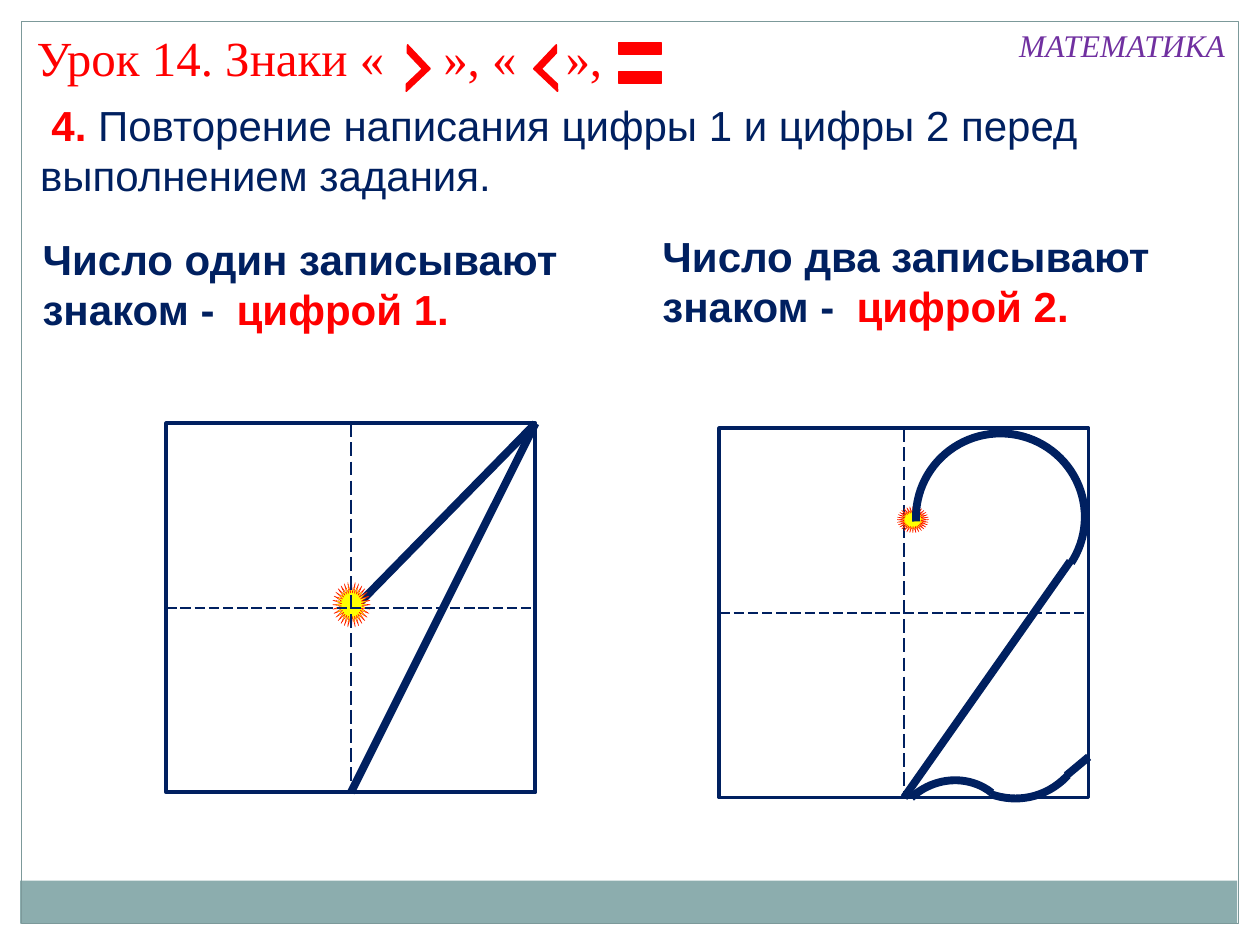
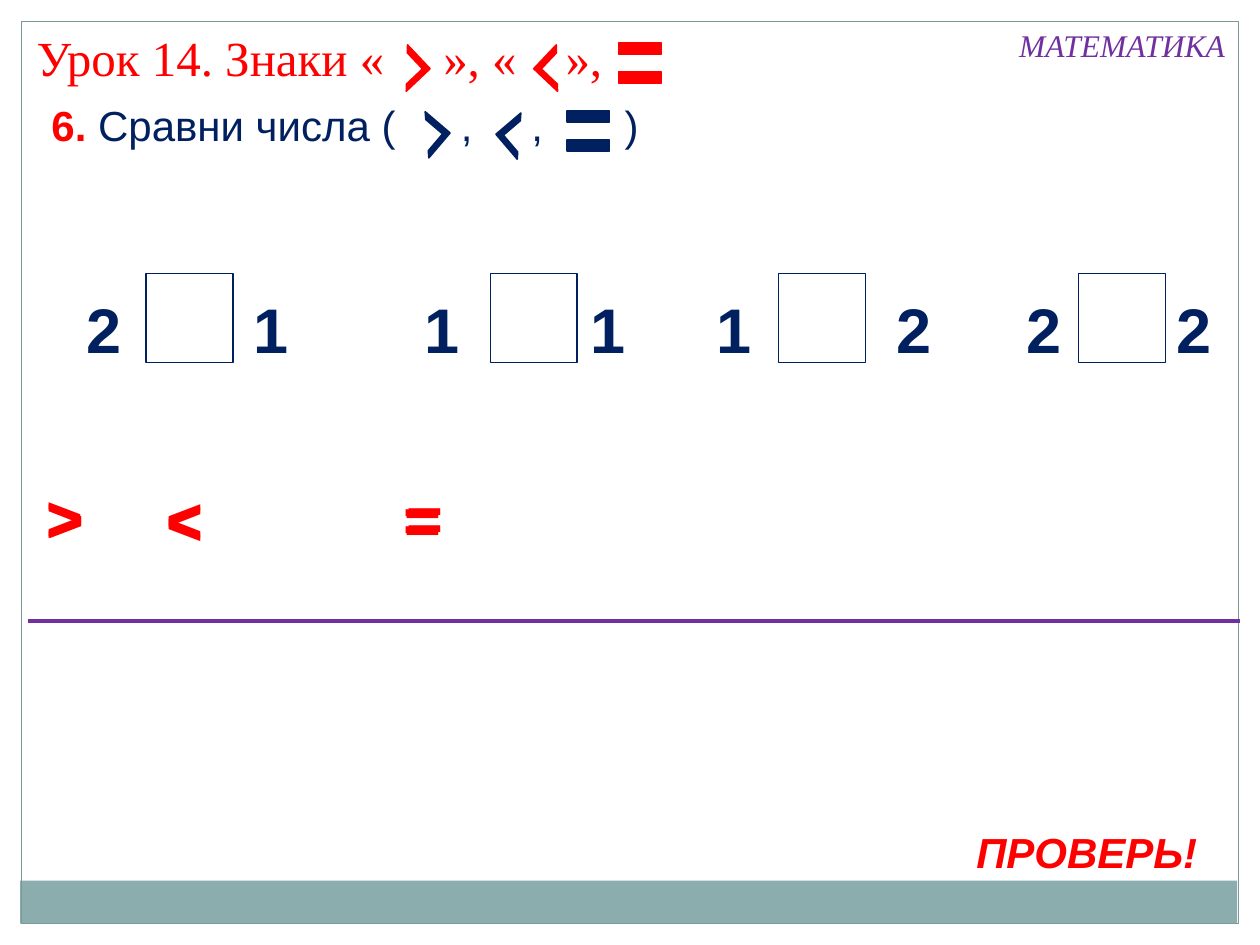
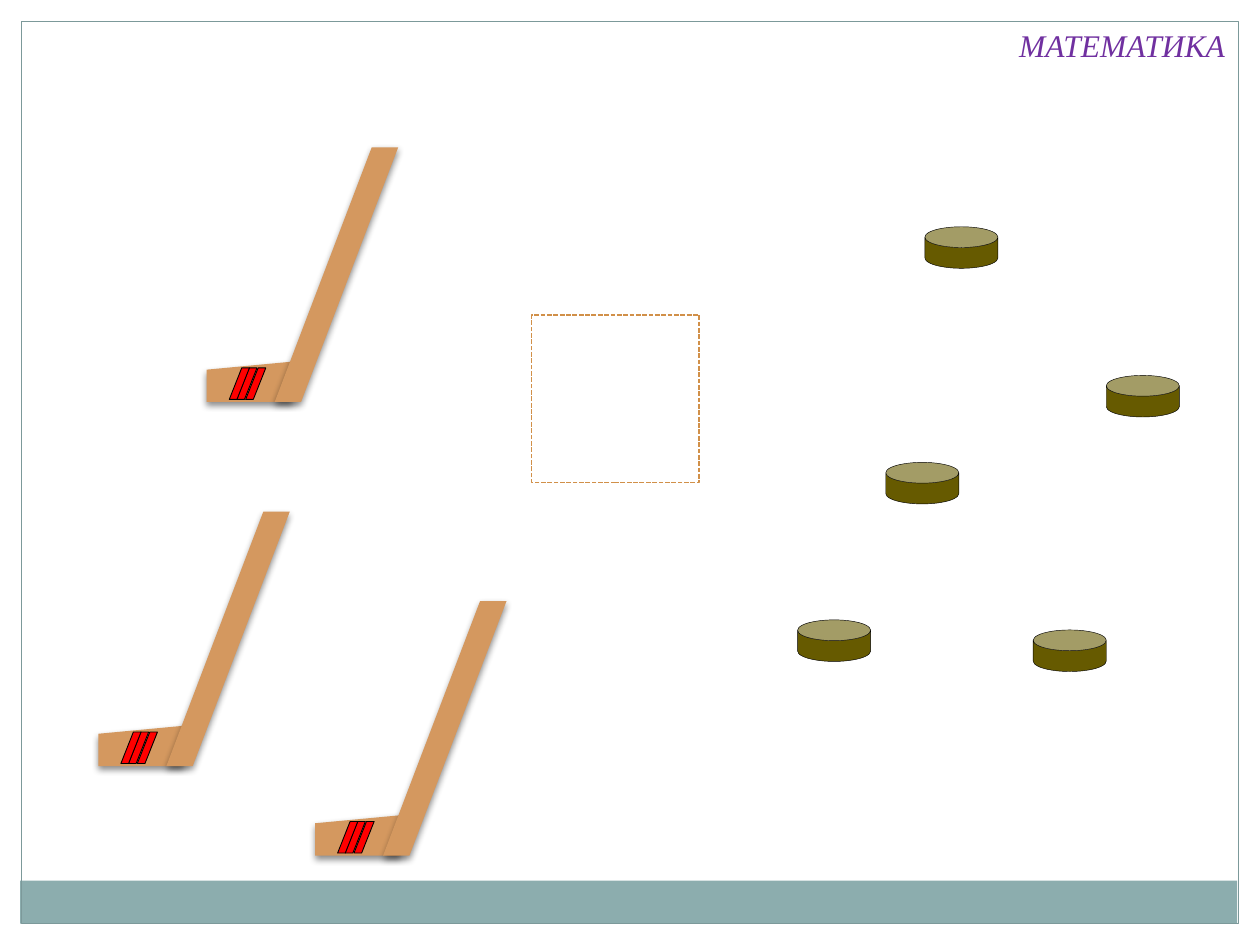
from dataclasses import dataclass

from lxml.etree import SubElement
from pptx import Presentation
from pptx.dml.color import RGBColor
from pptx.enum.dml import MSO_LINE
from pptx.enum.shapes import MSO_CONNECTOR, MSO_SHAPE
from pptx.enum.text import MSO_ANCHOR, MSO_AUTO_SIZE, PP_ALIGN
from pptx.oxml.ns import qn
from pptx.util import Inches, Pt


@dataclass(frozen=True)
class Theme:
    navy: str = "002060"
    red: str = "FF0000"
    purple: str = "7030A0"
    yellow: str = "FFFF00"
    white: str = "FFFFFF"
    black: str = "000000"
    band: str = "8CADAE"
    frame: str = "7C999A"
    wood: str = "D4985F"
    dashed_frame: str = "D19049"
    puck: str = "665A00"
    sans: str = "Arial"
    serif: str = "Times New Roman"
    subject_size: int = 18
    body_size: int = 24
    title_size: int = 28
    number_size: int = 36


THEME = Theme()


@dataclass(frozen=True)
class Box:
    """A region on the slide's grid of 10 columns by 7.5 rows, one inch each."""
    x: float
    y: float
    w: float
    h: float

    def at(self, dx, dy, w, h):
        """A region whose corner lies dx columns and dy rows inside this one."""
        return Box(self.x + dx, self.y + dy, w, h)

    def point(self, across, down):
        """A point given as shares of this region's width and height."""
        return self.x + across * self.w, self.y + down * self.h

    def emu(self):
        return [Inches(length) for length in (self.x, self.y, self.w, self.h)]


PAGE = Box(0, 0, 10, 7.5)


def style_line(line, color, width, dash=None):
    line.color.rgb = RGBColor.from_string(color)
    line.width = Pt(width)
    if dash is not None:
        line.dash_style = dash


def add_figure(slide, kind, box, fill=None, line=None, adjust=(), turn=0):
    """Add a preset shape; line is (colour, width[, dash])."""
    figure = slide.shapes.add_shape(kind, *box.emu())
    figure.shadow.inherit = False
    figure.rotation = turn
    for index, value in enumerate(adjust):
        figure.adjustments[index] = value
    if fill:
        figure.fill.solid()
        figure.fill.fore_color.rgb = RGBColor.from_string(fill)
    else:
        figure.fill.background()
    if line:
        style_line(figure.line, *line)
    else:
        figure.line.fill.background()
    return figure


def add_stroke(slide, start, end, color, width, dash=None):
    ends = [Inches(length) for length in (*start, *end)]
    stroke = slide.shapes.add_connector(MSO_CONNECTOR.STRAIGHT, *ends)
    style_line(stroke.line, color, width, dash)
    SubElement(stroke.element.spPr, qn("a:effectLst"))


def add_shadow(figure):
    effects = figure.element.spPr.find(qn("a:effectLst"))
    shadow = SubElement(effects, qn("a:outerShdw"), blurRad=str(Pt(4)), dist=str(Pt(2)),
                        dir="5400000", rotWithShape="0")
    color = SubElement(shadow, qn("a:srgbClr"), val=THEME.black)
    SubElement(color, qn("a:alpha"), val="45000")


def write(frame, pieces, size, face=THEME.sans, bold=None, italic=None,
          wrap=True, indent=None, tab=None):
    """Fill a text frame with (text, colour[, bold]) pieces in one paragraph."""
    frame.word_wrap = wrap
    frame.auto_size = MSO_AUTO_SIZE.SHAPE_TO_FIT_TEXT
    frame.vertical_anchor = MSO_ANCHOR.TOP
    paragraph = frame.paragraphs[0]
    paragraph.alignment = PP_ALIGN.LEFT
    properties = paragraph._p.get_or_add_pPr()
    if indent:
        properties.set("indent", str(Inches(indent)))
    if tab:
        stops = SubElement(properties, qn("a:tabLst"))
        SubElement(stops, qn("a:tab"), pos=str(Inches(tab)), algn="l")
    font = paragraph.font
    font.name, font.size, font.bold, font.italic = face, Pt(size), bold, italic
    for text, color, *weight in pieces:
        run = paragraph.add_run()
        run.text = text
        run.font.color.rgb = RGBColor.from_string(color)
        if weight:
            run.font.bold = weight[0]


def add_text(slide, box, pieces, size, **style):
    write(slide.shapes.add_textbox(*box.emu()).text_frame, pieces, size, **style)


def decorate_master(presentation, slide):
    """Build the margins, band and frame, then move them to the slide master."""
    margin = 0.17
    parts = [
        (PAGE.at(0, 0, PAGE.w, margin), THEME.white, None),
        (PAGE.at(PAGE.w - margin, 0, margin, PAGE.h), THEME.white, None),
        (PAGE.at(0, 0, margin, PAGE.h), THEME.white, None),
        (PAGE.at(0.16, 6.99, 9.66, 0.34), THEME.band, None),
        (PAGE.at(margin, margin, 9.66, 7.16), None, (THEME.frame, 0.75)),
    ]
    tree = presentation.slide_master.shapes.element
    for number, (box, fill, line) in enumerate(parts, start=101):
        part = add_figure(slide, MSO_SHAPE.RECTANGLE, box, fill, line).element
        part.nvSpPr.cNvPr.set("id", str(number))
        tree.append(part)


def add_subject(slide):
    add_text(slide, PAGE.at(7.99, 0.16, 1.85, 0.4), [("МАТЕМАТИКА", THEME.purple)],
             THEME.subject_size, face=THEME.serif, italic=True, wrap=False)


def add_comparison_signs(slide, color, greater, less, equal, turn):
    """Draw the three signs in their boxes; turn tilts the two angles."""
    outline = (color, 0.9)
    angle = (0.171, 0.155)
    right = add_figure(slide, MSO_SHAPE.HALF_FRAME, greater, color, outline, angle, turn)
    right.element.spPr.xfrm.set("flipH", "1")
    add_figure(slide, MSO_SHAPE.HALF_FRAME, less, color, outline, angle, 360 - turn)
    add_figure(slide, MSO_SHAPE.MATH_EQUAL, equal, color, outline, (0.085, 0.146))


def add_punctuation(slide, line_box, marks, color, size, face):
    """Set the marks that follow each sign at their (text, column, width)."""
    for text, column, width in marks:
        add_text(slide, line_box.at(column, 0, width, line_box.h), [(text, color)],
                 size, face=face)


def add_lesson_title(slide, box):
    title = slide.shapes.title
    title.left, title.top, title.width, title.height = box.at(0, 0, 3.1, box.h).emu()
    write(title.text_frame, [("Урок 14. Знаки «", THEME.red)],
          THEME.title_size, face=THEME.serif)
    add_punctuation(slide, box, [("», «", 3.23, 0.9), ("»,", 4.2, 0.6)],
                    THEME.red, THEME.title_size, THEME.serif)
    add_comparison_signs(slide, THEME.red, box.at(2.91, 0.24, 0.26, 0.26),
                         box.at(4.1, 0.24, 0.26, 0.26),
                         box.at(4.66, -0.17, 0.46, 1), 46.6)


def add_compare_task(slide, box):
    add_text(slide, box.at(0, 0, 3.2, box.h),
             [("6. ", THEME.red, True), ("Сравни числа (", THEME.navy)],
             THEME.body_size, indent=0.09)
    add_punctuation(slide, box, [(",", 3.34, 0.4), (",", 3.9, 0.4), (")", 4.64, 0.4)],
                    THEME.navy, THEME.body_size, THEME.sans)
    add_comparison_signs(slide, THEME.navy, box.at(3.04, 0.2, 0.26, 0.26),
                         box.at(3.77, 0.21, 0.26, 0.26),
                         box.at(4.22, -0.2, 0.46, 1), 40.4)


def add_writing_cell(slide, box):
    """Draw a square with dashed lines through its middle."""
    add_figure(slide, MSO_SHAPE.RECTANGLE, box, line=(THEME.navy, 2.25))
    add_stroke(slide, box.point(0.5, 0), box.point(0.5, 1), THEME.navy, 1, MSO_LINE.LONG_DASH)
    add_stroke(slide, box.point(0, 0.5), box.point(1, 0.5), THEME.navy, 0.75, MSO_LINE.LONG_DASH)


def add_start_spark(slide, box):
    add_figure(slide, MSO_SHAPE.STAR_32_POINT, box, THEME.yellow,
               (THEME.red, 0.25, MSO_LINE.SQUARE_DOT), (0.263,))


def draw_digit_one(slide, cell):
    corner = cell.point(1, 0)
    add_stroke(slide, cell.point(0.51, 0.5), corner, THEME.navy, 4.5)
    add_stroke(slide, corner, cell.point(0.5, 1), THEME.navy, 4.5)
    add_start_spark(slide, cell.at(1.32, 1.26, 0.3, 0.36))
    add_writing_cell(slide, cell)


def draw_digit_two(slide, cell):
    add_writing_cell(slide, cell)
    add_start_spark(slide, cell.at(1.41, 0.62, 0.25, 0.21))
    arcs = [
        (cell.at(1.56, 0.04, 1.34, 1.33), (108.358, 21.786), 356.5),
        (cell.at(1.7, 1.55, 1.24, 1.39), (144.657, 178), 167.7),
        (cell.at(1.36, 2.8, 0.97, 0.91), (152.944, 204.527), 330.4),
    ]
    for box, sweep, turn in arcs:
        add_figure(slide, MSO_SHAPE.ARC, box, line=(THEME.navy, 4.5), adjust=sweep, turn=turn)
    add_stroke(slide, cell.point(0.95, 0.36), cell.point(0.5, 1), THEME.navy, 4.5)
    add_stroke(slide, cell.point(0.94, 0.94), cell.point(1, 0.89), THEME.navy, 4.5)


def build_digits_slide(slide):
    add_lesson_title(slide, PAGE.at(0.19, 0.17, 5.31, 0.57))
    add_subject(slide)
    add_text(slide, PAGE.at(0.22, 0.74, 8.95, 0.91),
             [("4. ", THEME.red, True),
              ("Повторение написания цифры 1 и цифры 2 перед выполнением задания.", THEME.navy)],
             THEME.body_size, indent=0.09)
    lessons = [
        ("один", "1", PAGE.at(0.24, 1.8, 4.33, 0.91), PAGE.at(1.32, 3.36, 2.93, 2.93),
         draw_digit_one),
        ("два", "2", PAGE.at(5.16, 1.78, 4.44, 0.91), PAGE.at(5.71, 3.4, 2.93, 2.93),
         draw_digit_two),
    ]
    for word, digit, caption, cell, draw_digit in lessons:
        add_text(slide, caption,
                 [(f"Число {word} записывают знаком -\t", THEME.navy),
                  (f"цифрой {digit}.", THEME.red)],
                 THEME.body_size, bold=True, tab=1.54)
        draw_digit(slide, cell)


def add_number_pair(slide, blank, left, right):
    """Draw an empty cell between two (digit, column offset) numbers."""
    for digit, offset in (left, right):
        add_text(slide, blank.at(offset, 0.09, 0.48, 0.71), [(digit, THEME.navy)],
                 THEME.number_size, bold=True, wrap=False)
    add_figure(slide, MSO_SHAPE.RECTANGLE, blank, line=(THEME.navy, 0.75))


def build_compare_slide(slide):
    add_lesson_title(slide, PAGE.at(0.19, 0.17, 5.31, 0.57))
    add_subject(slide)
    add_compare_task(slide, PAGE.at(0.22, 0.74, 9.63, 0.5))
    pairs = [
        (1.16, ("2", -0.57), ("1", 0.75)),
        (3.89, ("1", -0.62), ("1", 0.7)),
        (6.18, ("1", -0.59), ("2", 0.84)),
        (8.56, ("2", -0.51), ("2", 0.68)),
    ]
    for column, left, right in pairs:
        add_number_pair(slide, PAGE.at(column, 2.17, 0.69, 0.71), left, right)
    sign_stacks = {
        ">": [(0.28, 3.76), (0.27, 3.74), (0.27, 3.76)],
        "<": [(1.22, 3.76), (1.22, 3.78)],
        "=": [(3.1, 3.76), (3.13, 3.75), (3.11, 3.77)],
    }
    for sign, corners in sign_stacks.items():
        for corner in corners:
            add_text(slide, PAGE.at(*corner, 0.69, 0.71), [(sign, THEME.red)],
                     THEME.number_size, bold=True)
    add_stroke(slide, (0.22, 4.93), (9.84, 4.93), THEME.purple, 2.25)
    add_text(slide, PAGE.at(7.65, 6.51, 2.08, 0.5), [("ПРОВЕРЬ!", THEME.red)],
             THEME.body_size, bold=True, italic=True)


def add_hockey_stick(slide, box):
    wooden_parts = [
        (MSO_SHAPE.FLOWCHART_MANUAL_INPUT, box.at(0, 1.7, 0.68, 0.32), ()),
        (MSO_SHAPE.PARALLELOGRAM, box.at(0.54, 0, 0.98, 2.02), (0.786,)),
    ]
    for kind, part, slant in wooden_parts:
        add_shadow(add_figure(slide, kind, part, THEME.wood, adjust=slant))
    for offset in (0.31, 0.24, 0.18):
        add_figure(slide, MSO_SHAPE.PARALLELOGRAM, box.at(offset, 1.75, 0.16, 0.25),
                   THEME.red, (THEME.black, 0.5), (0.619,))


def build_hockey_slide(slide):
    add_subject(slide)
    for column, row in [(8.78, 2.98), (7.34, 1.8), (7.03, 3.67), (8.2, 5), (6.33, 4.92)]:
        add_figure(slide, MSO_SHAPE.CAN, PAGE.at(column, row, 0.58, 0.33),
                   THEME.puck, (THEME.black, 0.25), (0.5,))
    for column, row in [(1.64, 1.17), (0.78, 4.06), (2.5, 4.77)]:
        add_hockey_stick(slide, PAGE.at(column, row, 1.52, 2.02))
    add_figure(slide, MSO_SHAPE.RECTANGLE, PAGE.at(4.22, 2.5, 1.33, 1.33), THEME.white,
               (THEME.dashed_frame, 0.9, MSO_LINE.SQUARE_DOT))


def main():
    presentation = Presentation()
    presentation.slide_width = Inches(PAGE.w)
    presentation.slide_height = Inches(PAGE.h)
    title_only, blank = presentation.slide_layouts[5], presentation.slide_layouts[6]
    digits, compare, hockey = [presentation.slides.add_slide(layout)
                               for layout in (title_only, title_only, blank)]
    decorate_master(presentation, digits)
    build_digits_slide(digits)
    build_compare_slide(compare)
    build_hockey_slide(hockey)
    presentation.save("out.pptx")


if __name__ == "__main__":
    main()
